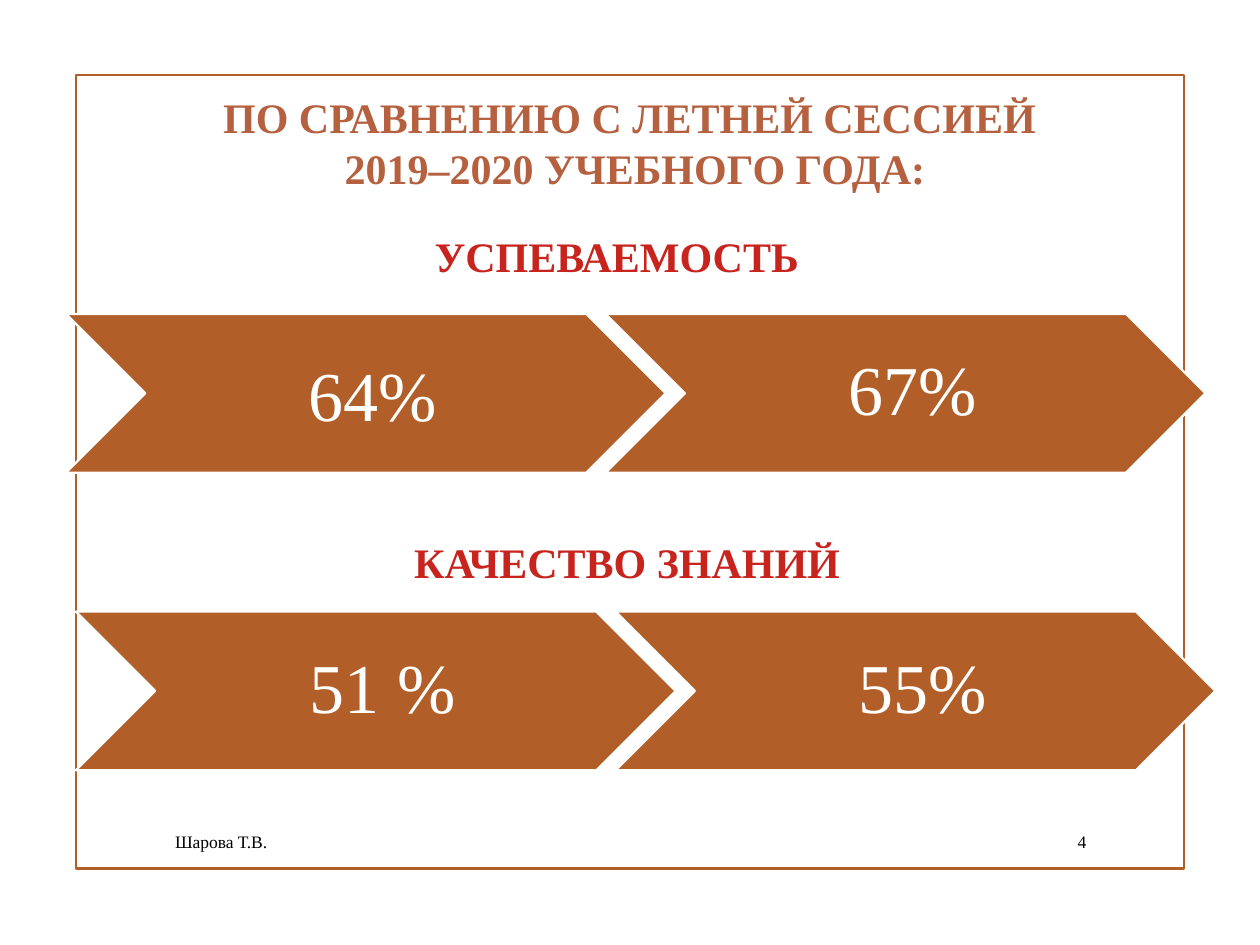
from pptx import Presentation
from pptx.dml.color import RGBColor
from pptx.enum.shapes import MSO_SHAPE as Shape
from pptx.enum.text import MSO_ANCHOR as Anchor, PP_ALIGN as Align
from pptx.util import Cm, Pt

COLORS = {
    "brown": "B15E28",
    "title": "B5603F",
    "heading": "C7241E",
    "white": "FFFFFF",
    "black": "000000",
}


def write(shape, lines, size, color, align, anchor, bold=False, wrap=True):
    frame = shape.text_frame
    frame.word_wrap = wrap
    frame.vertical_anchor = anchor
    frame.text = "\n".join(lines)
    for paragraph in frame.paragraphs:
        paragraph.alignment = align
        paragraph.font.name = "Times New Roman"
        paragraph.font.size = Pt(size)
        paragraph.font.bold = bold
        paragraph.font.color.rgb = RGBColor.from_string(COLORS[color])
    return frame


def add_box(shape_type, left, top, width, height, line):
    shape = slide.shapes.add_shape(shape_type, Cm(left), Cm(top), Cm(width), Cm(height))
    shape.shadow.inherit = False
    shape.line.color.rgb = RGBColor.from_string(COLORS[line])
    shape.line.width = Pt(1.25)
    return shape


presentation = Presentation()
presentation.slide_width = Cm(25.4)
presentation.slide_height = Cm(19.05)
slide = presentation.slides.add_slide(presentation.slide_layouts[6])

border = add_box(Shape.RECTANGLE, 1.54, 1.51, 22.33, 16, "brown")
border.fill.background()

title = slide.shapes.add_textbox(Cm(1.9), Cm(1.73), Cm(21.8), Cm(2.31))
write(title, ["ПО СРАВНЕНИЮ С ЛЕТНЕЙ СЕССИЕЙ ", "2019–2020 УЧЕБНОГО ГОДА:"],
      24, "title", Align.CENTER, Anchor.TOP, bold=True)

sections = [
    ("УСПЕВАЕМОСТЬ", 8.51, 4.52, 8.15, 1.33, 6.33, ["64%", "67%"]),
    ("КАЧЕСТВО ЗНАНИЙ", 8.1, 10.69, 9.17, 1.53, 12.33, ["51 %", "55%"]),
]
for heading, left, top, width, chevron_left, chevron_top, values in sections:
    for index, value in enumerate(values):
        chevron = add_box(Shape.CHEVRON, chevron_left + index * 10.88, chevron_top,
                          12.09, 3.2, "white")
        chevron.fill.solid()
        chevron.fill.fore_color.rgb = RGBColor.from_string(COLORS["brown"])
        frame = write(chevron, [value], 40, "white", Align.CENTER, Anchor.MIDDLE)
        frame.margin_left = Cm(0.43)
        frame.margin_top = frame.margin_right = frame.margin_bottom = Cm(0.15)
        if value != "64%":
            frame.paragraphs[0].line_spacing = 0.9
            frame.paragraphs[0].space_after = Pt(14)
    box = slide.shapes.add_textbox(Cm(left), Cm(top), Cm(width), Cm(1.27))
    write(box, [heading], 24, "heading", Align.LEFT, Anchor.TOP, bold=True, wrap=False)

footers = [
    ("Шарова Т.В.", 3.28, 14.17, Align.LEFT),
    ("4", 21.06, 1.09, Align.RIGHT),
]
for text, left, width, align in footers:
    footer = slide.shapes.add_textbox(Cm(left), Cm(16.56), Cm(width), Cm(0.79))
    write(footer, [text], 10, "black", align, Anchor.MIDDLE)

presentation.save("out.pptx")
